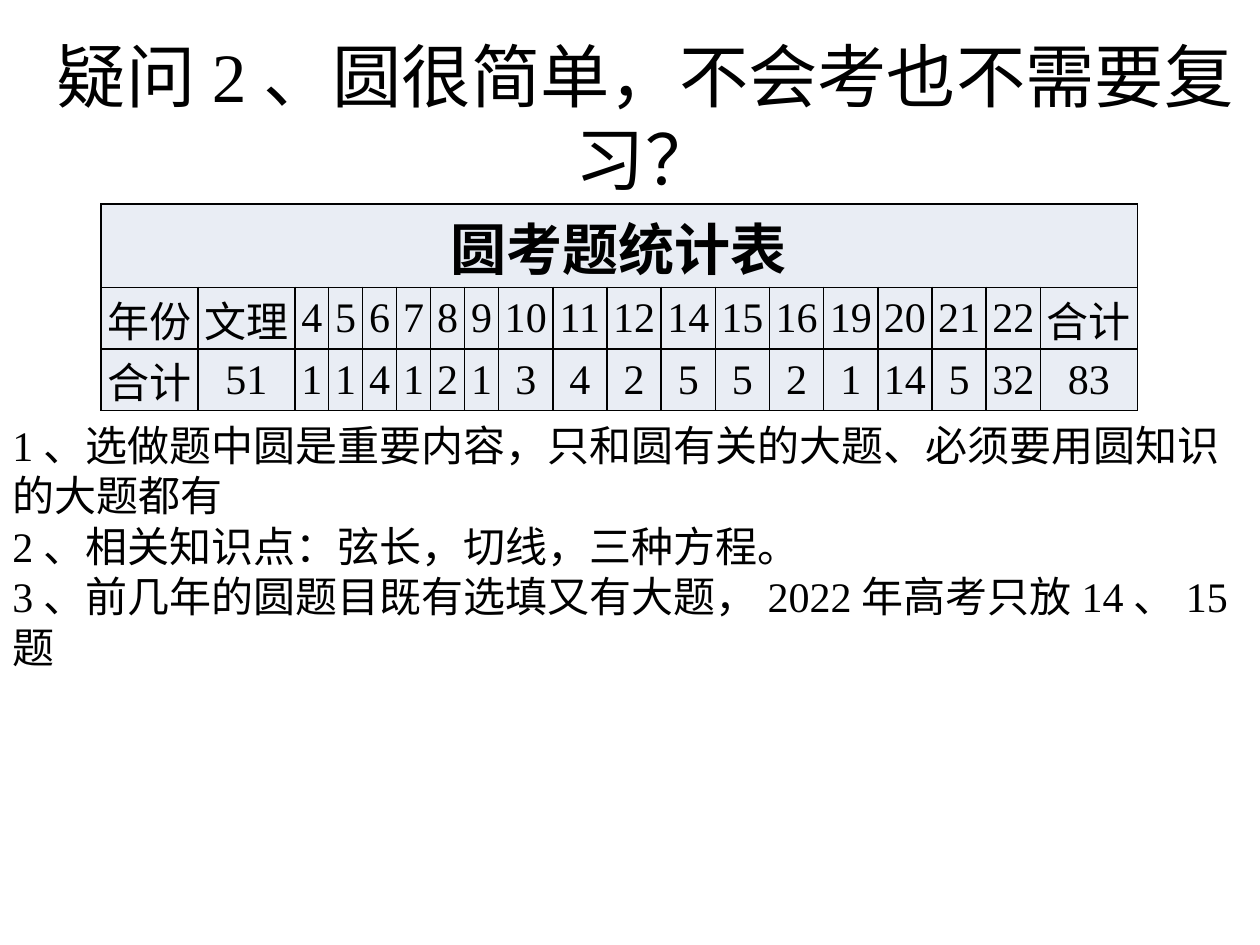
from lxml import etree
from pptx import Presentation
from pptx.dml.color import RGBColor
from pptx.enum.text import MSO_ANCHOR, PP_ALIGN
from pptx.oxml.ns import qn
from pptx.util import Inches, Pt

BLACK = RGBColor(0x00, 0x00, 0x00)
PALE_BLUE = RGBColor(0xE9, 0xED, 0xF4)
SERIF, SANS = "Times New Roman", "Calibri"

TITLE_RUNS = [("疑问2", SERIF), ("、圆很简单，不会考也不需要复习？", SANS)]
TABLE_TITLE = "圆考题统计表"
YEAR_ROW = "年份 文理 4 5 6 7 8 9 10 11 12 14 15 16 19 20 21 22 合计".split()
TOTAL_ROW = "合计 51 1 1 4 1 2 1 3 4 2 5 5 2 1 14 5 32 83".split()
COL_WIDTHS = [0.77] * 2 + [0.27] * 6 + [0.43] * 10 + [0.77]
ROW_HEIGHTS = [0.66, 0.49, 0.49]
NOTES = [
    "1、选做题中圆是重要内容，只和圆有关的大题、必须要用圆知识的大题都有",
    "2、相关知识点：弦长，切线，三种方程。",
    "3、前几年的圆题目既有选填又有大题，2022年高考只放14、15题",
]


def format_run(r, size, font, bold=False):
    r.font.size = Pt(size)
    r.font.name = font
    r.font.bold = bold
    r.font.color.rgb = BLACK


def add_text_frame(slide, left, top, width, height):
    box = slide.shapes.add_textbox(Inches(left), Inches(top), Inches(width), Inches(height))
    tf = box.text_frame
    tf.word_wrap = True
    return tf


def add_title(slide, left, top, width, height):
    tf = add_text_frame(slide, left, top, width, height)
    tf.vertical_anchor = MSO_ANCHOR.MIDDLE
    p = tf.paragraphs[0]
    p.alignment = PP_ALIGN.CENTER
    for text, font in TITLE_RUNS:
        r = p.add_run()
        r.text = text
        format_run(r, 39.6, font)


def style_cell(cell):
    """Set margins, black borders and fill, with the borders ahead of the fill in the XML."""
    cell.vertical_anchor = MSO_ANCHOR.MIDDLE
    cell.margin_left = cell.margin_right = cell.margin_top = Inches(0.01)
    cell.margin_bottom = 0
    tc_pr = cell._tc.get_or_add_tcPr()
    for side in ("a:lnL", "a:lnR", "a:lnT", "a:lnB"):
        ln = etree.SubElement(tc_pr, qn(side), w=str(Pt(1)))
        fill = etree.SubElement(ln, qn("a:solidFill"))
        etree.SubElement(fill, qn("a:srgbClr"), val=str(BLACK))
    cell.fill.solid()
    cell.fill.fore_color.rgb = PALE_BLUE


def fill_cell(cell, text, size, font, bold=False):
    p = cell.text_frame.paragraphs[0]
    p.text = text
    p.alignment = PP_ALIGN.CENTER
    format_run(p.runs[0], size, font, bold)


def add_statistics_table(slide, left, top):
    table = slide.shapes.add_table(
        len(ROW_HEIGHTS), len(COL_WIDTHS), Inches(left), Inches(top),
        Inches(sum(COL_WIDTHS)), Inches(sum(ROW_HEIGHTS))).table
    for col, width in zip(table.columns, COL_WIDTHS):
        col.width = Inches(width)
    for row, height in zip(table.rows, ROW_HEIGHTS):
        row.height = Inches(height)
    for cell in table.iter_cells():
        style_cell(cell)
    table.cell(0, 0).merge(table.cell(0, len(COL_WIDTHS) - 1))
    fill_cell(table.cell(0, 0), TABLE_TITLE, 32, SANS, bold=True)
    for i, values in enumerate([YEAR_ROW, TOTAL_ROW], start=1):
        for j, value in enumerate(values):
            fill_cell(table.cell(i, j), value, 24, SERIF)


def add_notes(slide, left, top, width, height):
    tf = add_text_frame(slide, left, top, width, height)
    tf.text = "\n".join(NOTES)
    for p in tf.paragraphs:
        format_run(p.runs[0], 24, SERIF)


def main():
    prs = Presentation()
    prs.slide_width, prs.slide_height = Inches(10), Inches(7.5)
    slide = prs.slides.add_slide(prs.slide_layouts[6])
    add_title(slide, 0.12, 0.3, 10, 1.25)
    add_statistics_table(slide, 0.8, 1.62)
    add_notes(slide, 0, 3.28, 9.88, 1.72)
    prs.save("out.pptx")


if __name__ == "__main__":
    main()
